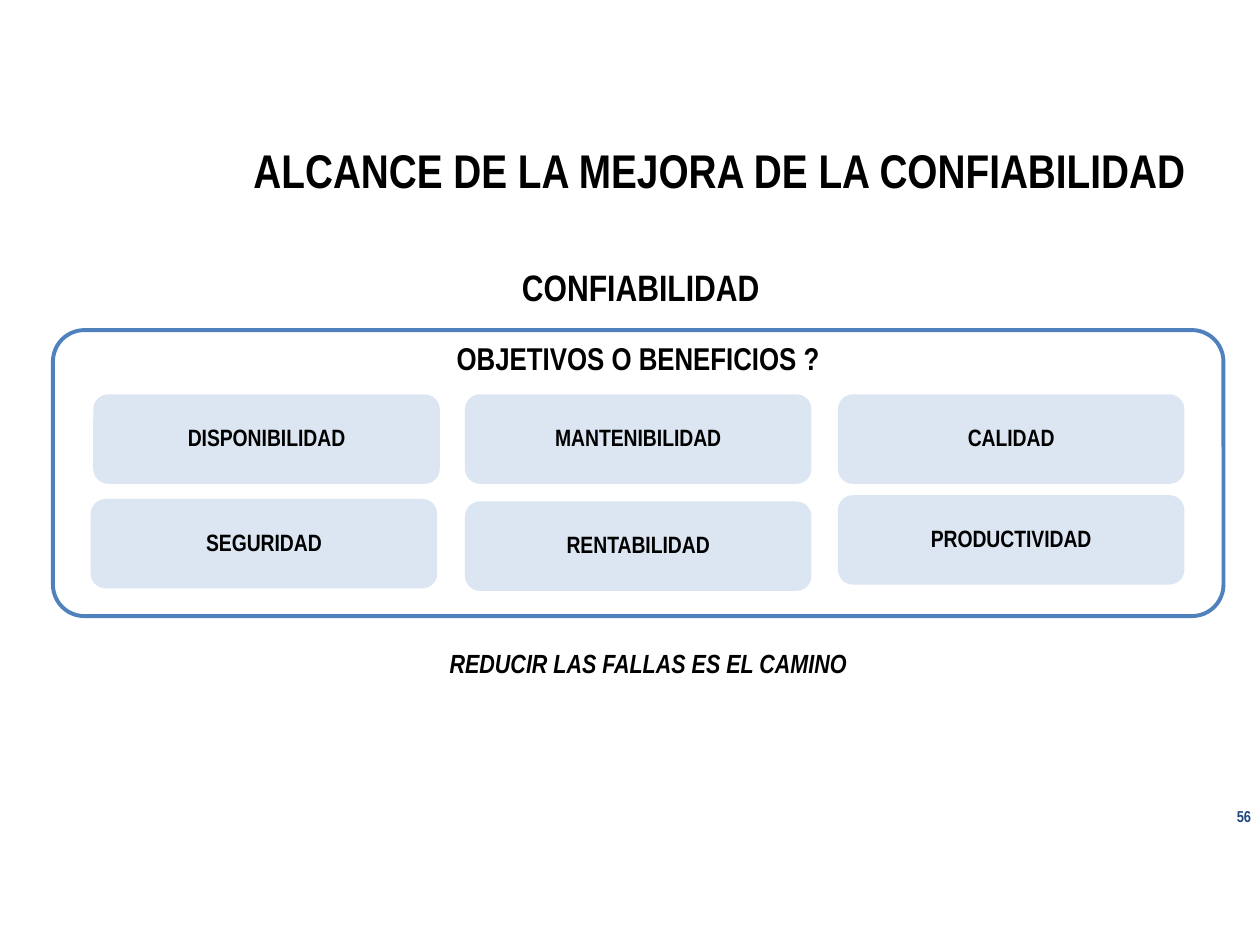
"""Build the slide on the scope of reliability improvement."""
from dataclasses import dataclass
from typing import Optional

from pptx import Presentation
from pptx.dml.color import RGBColor
from pptx.enum.shapes import MSO_SHAPE
from pptx.enum.text import MSO_ANCHOR, PP_ALIGN
from pptx.util import Inches, Pt

FONT = "Arial Narrow"
BLACK, WHITE, NAVY, BLUE, PALE = "000000", "FFFFFF", "1F497D", "4F81BD", "DCE6F2"
COLUMNS = (0.74, 3.69, 6.65)
CARD_WIDTH, CARD_HEIGHT = 2.75, 0.71
TOP_ROW = 3.13


@dataclass
class Label:
    """Wording, place and style of one piece of text."""
    text: str
    left: float
    top: float
    width: float
    height: float
    size: float
    color: str = BLACK
    italic: bool = False
    align: PP_ALIGN = PP_ALIGN.CENTER
    anchor: MSO_ANCHOR = MSO_ANCHOR.MIDDLE
    margins: tuple[float, float] = (0.1, 0.05)
    spacing: float = 1.0
    wrap: bool = True


def rgb(color: str) -> RGBColor:
    """Turn a hex string into a colour."""
    return RGBColor.from_string(color)


def write(shape, label: Label) -> None:
    """Write the label into a shape and format it."""
    frame = shape.text_frame
    frame.text = label.text
    frame.word_wrap = label.wrap
    frame.vertical_anchor = label.anchor
    across, down = label.margins
    frame.margin_left = frame.margin_right = Inches(across)
    frame.margin_top = frame.margin_bottom = Inches(down)
    paragraph = frame.paragraphs[0]
    paragraph.alignment = label.align
    paragraph.line_spacing = label.spacing
    font = paragraph.runs[0].font
    font.name, font.size = FONT, Pt(label.size)
    font.bold, font.italic = True, label.italic
    font.color.rgb = rgb(label.color)


def place(label: Label) -> tuple:
    """Return the label's box as lengths."""
    return tuple(map(Inches, (label.left, label.top, label.width, label.height)))


def add_text(slide, label: Label) -> None:
    """Add a text box."""
    write(slide.shapes.add_textbox(*place(label)), label)


def add_panel(slide, label: Label, fill: Optional[str] = None,
              outline: Optional[str] = None, corner: Optional[float] = None,
              kind: MSO_SHAPE = MSO_SHAPE.ROUNDED_RECTANGLE) -> None:
    """Add a shape with text, an optional fill and an optional outline."""
    panel = slide.shapes.add_shape(kind, *place(label))
    panel.shadow.inherit = False
    if corner is not None:
        panel.adjustments[0] = corner
    if fill:
        panel.fill.solid()
        panel.fill.fore_color.rgb = rgb(fill)
    else:
        panel.fill.background()
    if outline:
        panel.line.color.rgb = rgb(outline)
        panel.line.width = Pt(2.25)
    else:
        panel.line.fill.background()
    write(panel, label)


def add_card(slide, text: str, left: float, top: float) -> None:
    """Add one benefit card."""
    add_panel(slide, Label(text, left, top, CARD_WIDTH, CARD_HEIGHT, 13.5,
                           margins=(0.03, 0.03), spacing=0.9), PALE)


def main() -> None:
    """Build and save the slide."""
    deck = Presentation()
    deck.slide_width, deck.slide_height = Inches(10), Inches(7.5)
    slide = deck.slides.add_slide(deck.slide_layouts[6])

    add_text(slide, Label("ALCANCE DE LA MEJORA DE LA CONFIABILIDAD",
                          1.89, 0.98, 7.64, 0.79, 27, spacing=0.9))
    add_panel(slide, Label("CONFIABILIDAD", 0.44, 2.03, 9.29, 0.5, 21))
    add_panel(slide, Label("OBJETIVOS O BENEFICIOS ?", 0.42, 2.62, 9.29, 2.27, 18,
                           anchor=MSO_ANCHOR.TOP, margins=(0.03, 0.03),
                           spacing=0.9, wrap=False), WHITE, BLUE, 0.11)

    for text, left in zip(("DISPONIBILIDAD", "MANTENIBILIDAD", "CALIDAD"), COLUMNS):
        add_card(slide, text, left, TOP_ROW)
    add_card(slide, "SEGURIDAD", 0.72, 3.96)
    add_card(slide, "RENTABILIDAD", COLUMNS[1], 3.98)
    add_card(slide, "PRODUCTIVIDAD", COLUMNS[2], 3.93)

    add_panel(slide, Label("REDUCIR LAS FALLAS ES EL CAMINO", 3.47, 5.09, 6.32, 0.35, 15,
                           italic=True, align=PP_ALIGN.LEFT, anchor=MSO_ANCHOR.TOP),
              WHITE, kind=MSO_SHAPE.RECTANGLE)
    add_text(slide, Label("56", 8.25, 6.39, 1.75, 0.18, 9, NAVY,
                          align=PP_ALIGN.RIGHT, margins=(0.07, 0.04)))
    deck.save("out.pptx")


if __name__ == "__main__":
    main()
